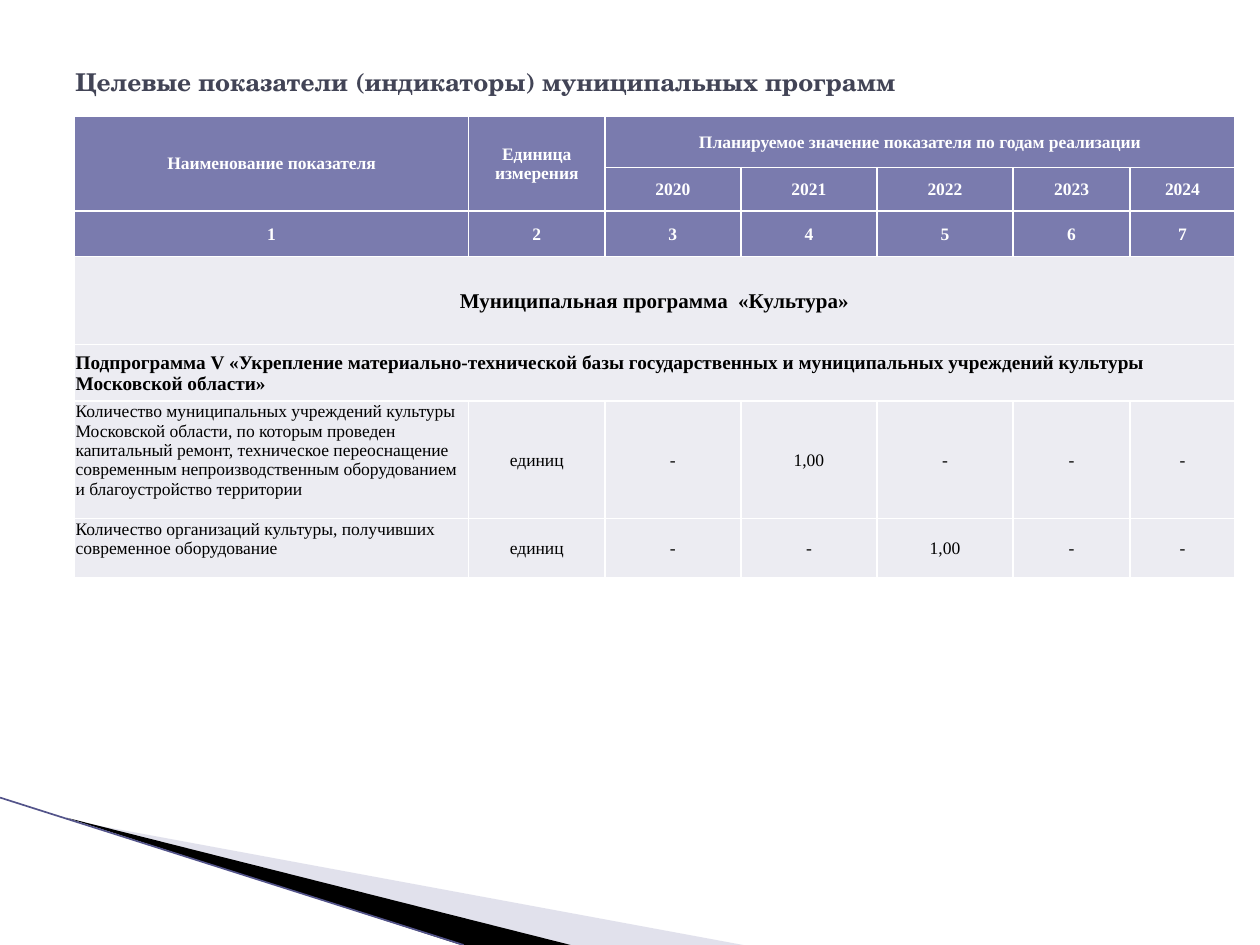
"""Build a slide with the target indicators of a municipal culture programme."""
from lxml import etree
from pptx import Presentation
from pptx.dml.color import RGBColor
from pptx.enum.shapes import MSO_CONNECTOR
from pptx.enum.text import MSO_ANCHOR, PP_ALIGN
from pptx.oxml.ns import qn
from pptx.util import Inches, Pt

LEFT, CENTER = PP_ALIGN.LEFT, PP_ALIGN.CENTER
TOP, MIDDLE = MSO_ANCHOR.TOP, MSO_ANCHOR.MIDDLE
STRAIGHT = MSO_CONNECTOR.STRAIGHT

WHITE = RGBColor(0xFF, 0xFF, 0xFF)
BLACK = RGBColor(0x00, 0x00, 0x00)
SLATE = RGBColor(0x42, 0x44, 0x56)
HEADER = RGBColor(0x7A, 0x7B, 0xAE)
BODY = RGBColor(0xEC, 0xEC, 0xF2)
LILAC = RGBColor(0xB6, 0xB6, 0xD1)
INDIGO = RGBColor(0x53, 0x54, 0x8A)

TITLE = "Целевые показатели (индикаторы) муниципальных программ"
ROWS = [
    ["Наименование показателя", "Единица измерения",
     "Планируемое значение показателя по годам реализации", "", "", "", ""],
    ["", "", "2020", "2021", "2022", "2023", "2024"],
    ["1", "2", "3", "4", "5", "6", "7"],
    ["Муниципальная программа  «Культура»"] + [""] * 6,
    ["Подпрограмма V «Укрепление материально-технической базы государственных "
     "и муниципальных учреждений культуры Московской области»"] + [""] * 6,
    ["Количество муниципальных учреждений культуры Московской области, по которым "
     "проведен капитальный ремонт, техническое переоснащение современным "
     "непроизводственным оборудованием и благоустройство территории",
     "единиц", "-", "1,00", "-", "-", "-"],
    ["Количество организаций культуры, получивших современное оборудование",
     "единиц", "-", "-", "1,00", "-", "-"],
]
COLUMN_WIDTHS = [3.13, 1.08, 1.08, 1.08, 1.08, 0.93, 0.83]
ROW_HEIGHTS = [0.41, 0.32, 0.36, 0.7, 0.45, 0.93, 0.47]
MERGES = [((0, 0), (1, 0)), ((0, 1), (1, 1)), ((0, 2), (0, 6)),
          ((3, 0), (3, 6)), ((4, 0), (4, 6))]
HEADER_ROWS, PROGRAM_ROW, SUBPROGRAM_ROW = 3, 3, 4
WEDGES = [
    ([(0.55, 6.51), (5.9, 7.5), (4.52, 7.5)], LILAC, 40),
    ([(0.53, 6.49), (4.53, 7.5), (3.66, 7.5)], BLACK, 100),
]


def write(frame, text, font="Times New Roman", size=10, color=BLACK, bold=False, align=LEFT):
    frame.word_wrap = True
    paragraph = frame.paragraphs[0]
    paragraph.text = text
    paragraph.alignment = align
    paragraph.font.name = font
    paragraph.font.size = Pt(size)
    paragraph.font.bold = bold
    paragraph.font.color.rgb = color


def add_wedge(slide, points, color, opacity):
    corners = [(Inches(x), Inches(y)) for x, y in points]
    builder = slide.shapes.build_freeform(*corners[0])
    builder.add_line_segments(corners[1:], close=True)
    shape = builder.convert_to_shape()
    shape.shadow.inherit = False
    shape.fill.solid()
    shape.fill.fore_color.rgb = color
    shape.line.fill.background()
    if opacity < 100:
        fill_color = shape.fill._xPr.find(qn("a:solidFill"))[0]
        etree.SubElement(fill_color, qn("a:alpha"), val=str(opacity * 1000))


def add_edge(slide):
    line = slide.shapes.add_connector(
        STRAIGHT, Inches(0), Inches(6.33), Inches(3.68), Inches(7.5))
    line.line.color.rgb = INDIGO
    line.line.width = Pt(0.95)
    etree.SubElement(line._element.spPr, qn("a:effectLst"))


def set_borders(cell):
    properties = cell._tc.get_or_add_tcPr()
    for index, side in enumerate(("lnL", "lnR", "lnT", "lnB")):
        border = etree.Element(qn(f"a:{side}"), w=str(Pt(1)))
        fill = etree.SubElement(border, qn("a:solidFill"))
        etree.SubElement(fill, qn("a:srgbClr"), val=str(WHITE))
        properties.insert(index, border)


def cell_format(row, column):
    if row < HEADER_ROWS:
        return {"color": WHITE, "bold": True, "align": CENTER}
    if row == PROGRAM_ROW:
        return {"size": 12, "bold": True, "align": CENTER}
    if row == SUBPROGRAM_ROW:
        return {"size": 11, "bold": True}
    return {"align": CENTER if column else LEFT}


def add_indicators(slide):
    table = slide.shapes.add_table(
        len(ROWS), len(COLUMN_WIDTHS), Inches(0.59), Inches(0.92),
        Inches(sum(COLUMN_WIDTHS)), Inches(sum(ROW_HEIGHTS))).table
    for column, width in zip(table.columns, COLUMN_WIDTHS):
        column.width = Inches(width)
    for row, height in zip(table.rows, ROW_HEIGHTS):
        row.height = Inches(height)
    for start, end in MERGES:
        table.cell(*start).merge(table.cell(*end))
    for row, texts in enumerate(ROWS):
        for column, text in enumerate(texts):
            cell = table.cell(row, column)
            cell.margin_left = cell.margin_right = cell.margin_top = Inches(0.01)
            cell.margin_bottom = 0
            is_name = row > SUBPROGRAM_ROW and column == 0
            cell.vertical_anchor = TOP if is_name else MIDDLE
            cell.fill.solid()
            cell.fill.fore_color.rgb = HEADER if row < HEADER_ROWS else BODY
            set_borders(cell)
            write(cell.text_frame, text, **cell_format(row, column))


def main():
    presentation = Presentation()
    presentation.slide_width, presentation.slide_height = Inches(10), Inches(7.5)
    slide = presentation.slides.add_slide(presentation.slide_layouts[6])
    for wedge in WEDGES:
        add_wedge(slide, *wedge)
    add_edge(slide)
    title = slide.shapes.add_textbox(Inches(0.5), Inches(0.3), Inches(9), Inches(0.69))
    title.text_frame.vertical_anchor = MIDDLE
    write(title.text_frame, TITLE, font="TeX Gyre Schola", size=14, color=SLATE, bold=True)
    add_indicators(slide)
    presentation.save("out.pptx")


if __name__ == "__main__":
    main()
